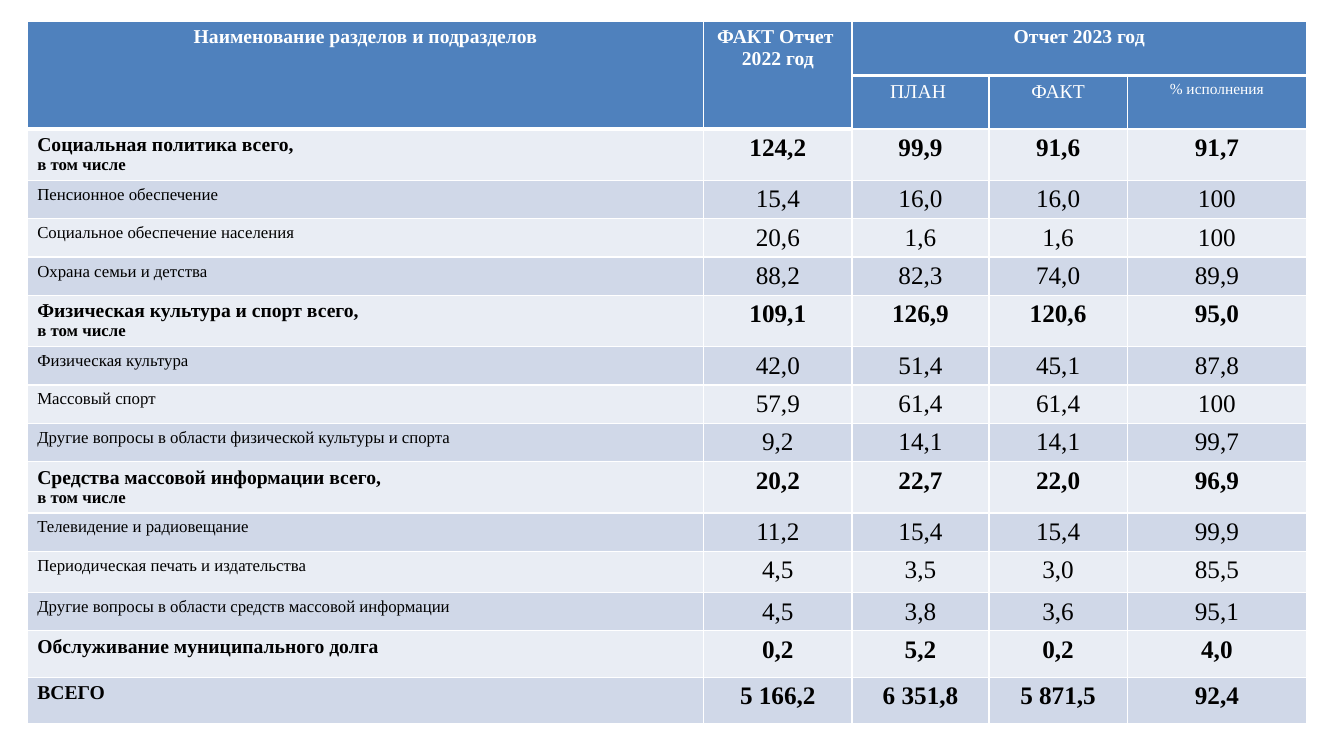
from dataclasses import dataclass

from lxml import etree
from pptx import Presentation
from pptx import util as u
from pptx.dml.color import RGBColor
from pptx.enum import text
from pptx.oxml.ns import qn
from pptx.table import Table, _Cell

PX = 9144  # EMU in one px, 100 px to the inch

WHITE = RGBColor(0xFF, 0xFF, 0xFF)
BLACK = RGBColor(0x00, 0x00, 0x00)
HEADER_BLUE = RGBColor(0x4F, 0x81, 0xBD)
BANDS = (RGBColor(0xE9, 0xED, 0xF4), RGBColor(0xD0, 0xD8, 0xE8))

FONT = "Times New Roman"
CENTER, LEFT = text.PP_ALIGN.CENTER, text.PP_ALIGN.LEFT
INCLUDING = "в том числе"

COLUMN_WIDTHS = (671, 147, 136, 137, 178)
HEADER_HEIGHTS = (54, 49)


@dataclass(frozen=True)
class Heading:
    row: int
    col: int
    lines: tuple[str, ...]
    size: int = 14
    bold: bool = True
    rows: int = 1
    cols: int = 1


@dataclass(frozen=True)
class Budget:
    name: str
    amounts: tuple[str, str, str, str]
    height: int = 38
    bold: bool = False
    has_parts: bool = False


def section(name: str, *amounts: str) -> Budget:
    return Budget(name, amounts, height=51, bold=True, has_parts=True)


def total(name: str, *amounts: str) -> Budget:
    return Budget(name, amounts, height=46, bold=True)


HEADINGS = (
    Heading(0, 0, ("Наименование разделов и подразделов",), rows=2),
    Heading(0, 1, ("ФАКТ Отчет ", "2022 год"), rows=2),
    Heading(0, 2, ("Отчет 2023 год",), cols=3),
    Heading(1, 2, ("ПЛАН ",), bold=False),
    Heading(1, 3, ("ФАКТ",), bold=False),
    Heading(1, 4, ("% исполнения",), size=11, bold=False),
)

BUDGETS = (
    section("Социальная политика всего,", "124,2", "99,9", "91,6", "91,7"),
    Budget("Пенсионное обеспечение", ("15,4", "16,0", "16,0", "100")),
    Budget("Социальное обеспечение населения", ("20,6", "1,6", "1,6", "100")),
    Budget("Охрана семьи и детства", ("88,2", "82,3", "74,0", "89,9")),
    section("Физическая культура и спорт всего,", "109,1", "126,9", "120,6", "95,0"),
    Budget("Физическая культура", ("42,0", "51,4", "45,1", "87,8")),
    Budget("Массовый спорт", ("57,9", "61,4", "61,4", "100")),
    Budget("Другие вопросы в области физической культуры и спорта",
           ("9,2", "14,1", "14,1", "99,7")),
    section("Средства массовой информации всего,", "20,2", "22,7", "22,0", "96,9"),
    Budget("Телевидение и радиовещание", ("11,2", "15,4", "15,4", "99,9")),
    Budget("Периодическая печать и издательства", ("4,5", "3,5", "3,0", "85,5"), height=41),
    Budget("Другие вопросы в области средств массовой информации",
           ("4,5", "3,8", "3,6", "95,1")),
    total("Обслуживание муниципального долга", "0,2", "5,2", "0,2", "4,0"),
    total("ВСЕГО", "5 166,2", "6 351,8", "5 871,5", "92,4"),
)


def rule_below(row: int, col: int) -> int:
    """Width in points of the rule under a cell: thick under the top headings."""
    return 3 if (row == 0 and col >= 2) or (row == 1 and col < 2) else 1


def add_borders(cell: _Cell, row: int, col: int) -> None:
    properties = cell._tc.get_or_add_tcPr()
    widths = {"a:lnL": 1, "a:lnR": 1,
              "a:lnT": rule_below(row - 1, col), "a:lnB": rule_below(row, col)}
    for side, points in widths.items():
        border = etree.SubElement(properties, qn(side), w=str(u.Pt(points)))
        paint = etree.SubElement(border, qn("a:solidFill"))
        etree.SubElement(paint, qn("a:srgbClr"), val=str(WHITE))


def add_line(cell: _Cell, line: str, first: bool, align: text.PP_ALIGN,
             size: int, bold: bool, color: RGBColor) -> None:
    frame = cell.text_frame
    paragraph = frame.paragraphs[0] if first else frame.add_paragraph()
    paragraph.alignment = align
    run = paragraph.add_run()
    run.text = line
    for attribute, value in {"name": FONT, "size": u.Pt(size), "bold": bold}.items():
        setattr(run.font, attribute, value)
    run.font.color.rgb = color


def add_heading(table: Table, heading: Heading) -> None:
    cell = table.cell(heading.row, heading.col)
    if heading.rows * heading.cols > 1:
        cell.merge(table.cell(heading.row + heading.rows - 1,
                              heading.col + heading.cols - 1))
    for index, line in enumerate(heading.lines):
        add_line(cell, line, index == 0, CENTER, heading.size, heading.bold, WHITE)


def add_budget(table: Table, row: int, budget: Budget) -> None:
    name = table.cell(row, 0)
    add_line(name, budget.name, True, LEFT, 14 if budget.bold else 12, budget.bold, BLACK)
    if budget.has_parts:
        add_line(name, INCLUDING, False, LEFT, 12, True, BLACK)
    for col, amount in enumerate(budget.amounts, start=1):
        add_line(table.cell(row, col), amount, True, CENTER, 18, budget.bold, BLACK)


def add_budget_table(slide) -> None:
    heights = HEADER_HEIGHTS + tuple(budget.height for budget in BUDGETS)
    frame = slide.shapes.add_table(
        len(heights), len(COLUMN_WIDTHS), 27 * PX, 21 * PX,
        sum(COLUMN_WIDTHS) * PX, sum(heights) * PX)
    table = frame.table
    for flag in ("first_row", "horz_banding"):
        setattr(table, flag, False)
    for column, width in zip(table.columns, COLUMN_WIDTHS):
        column.width = width * PX

    # Grid: heights, borders and bands
    headers = len(HEADER_HEIGHTS)
    for row, height in enumerate(heights):
        table.rows[row].height = height * PX
        for col in range(len(COLUMN_WIDTHS)):
            cell = table.cell(row, col)
            add_borders(cell, row, col)
            cell.fill.solid()
            cell.fill.fore_color.rgb = (
                HEADER_BLUE if row < headers else BANDS[(row - headers) % 2])

    # Wording and amounts
    for heading in HEADINGS:
        add_heading(table, heading)
    for row, budget in enumerate(BUDGETS, start=headers):
        add_budget(table, row, budget)


def main() -> None:
    deck = Presentation()
    deck.slide_width, deck.slide_height = 1333 * PX, 750 * PX
    blank_layout = deck.slide_layouts[6]
    add_budget_table(deck.slides.add_slide(blank_layout))
    deck.save("out.pptx")


if __name__ == "__main__":
    main()
